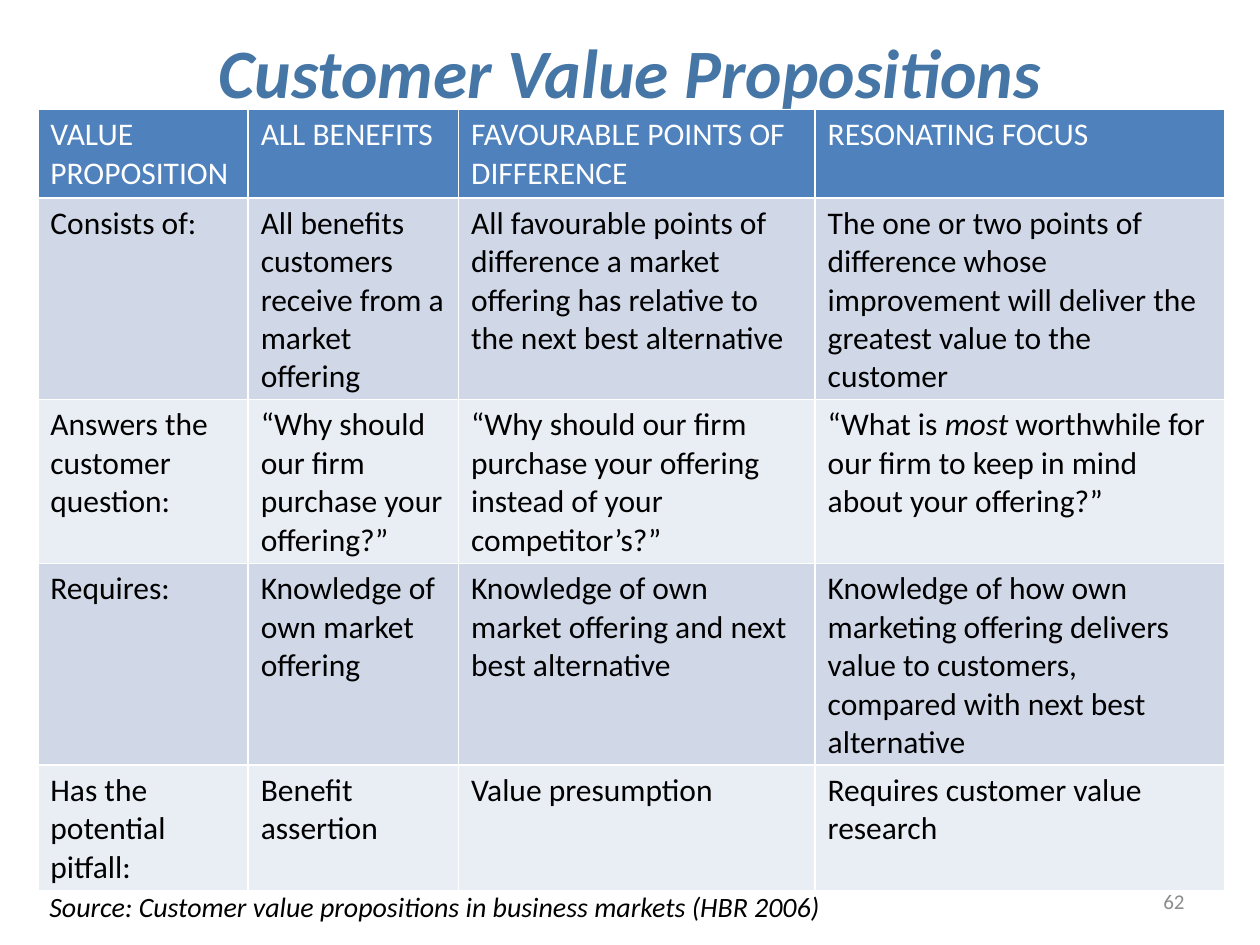
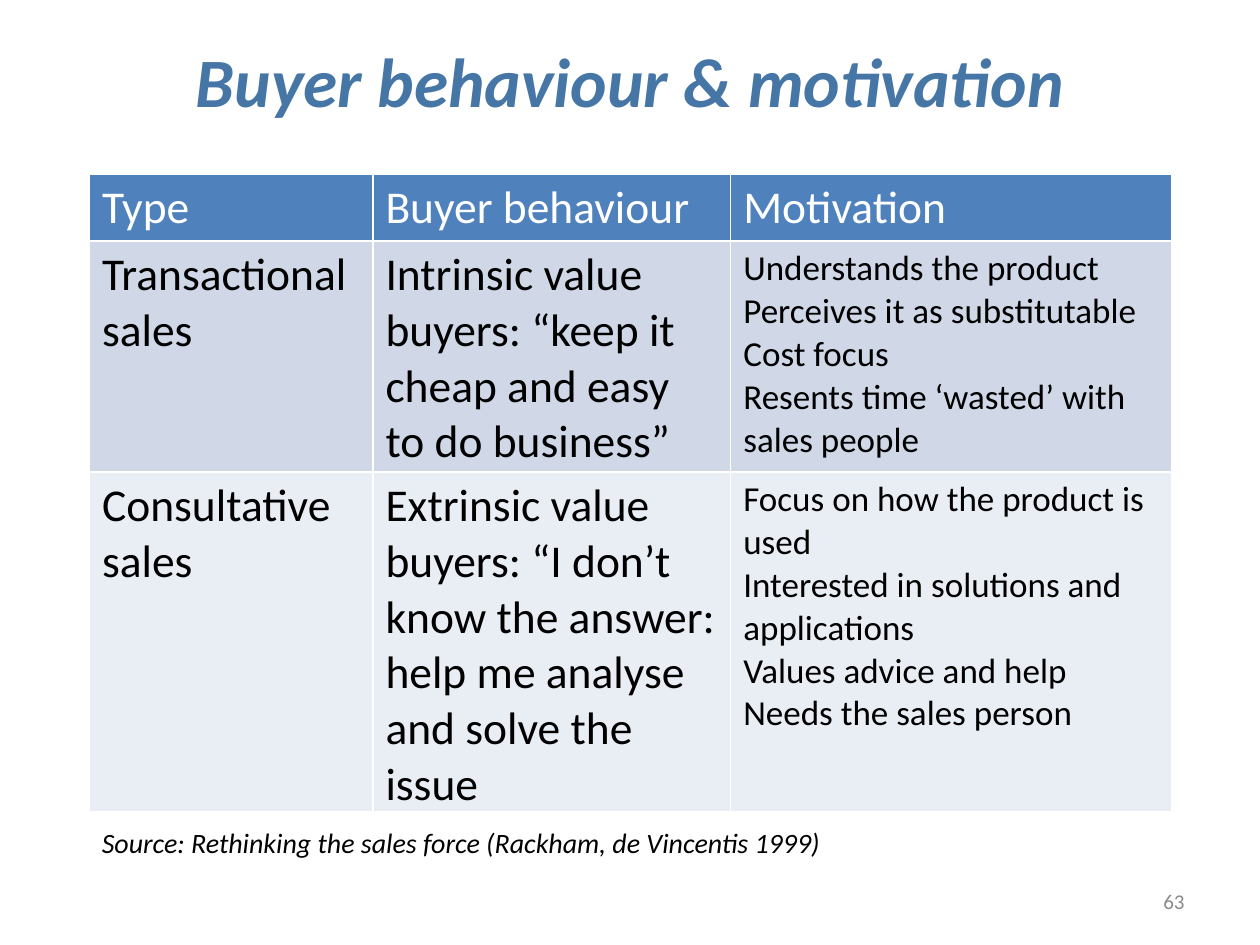
from dataclasses import dataclass

from pptx import Presentation
from pptx.dml.color import RGBColor
from pptx.enum.text import MSO_ANCHOR, PP_ALIGN
from pptx.util import Inches, Pt

# Asterisks mark italic words; a list in a cell holds one paragraph per item.
SLIDES = [
    {
        "title": "Customer Value Propositions",
        "top": 0.17,
        "number": "62",
        "source": "Source: Customer value propositions in business markets (HBR 2006)",
        "source_box": (0.22, 7.01, 6.46, 0.37),
        "source_align": PP_ALIGN.CENTER,
        "origin": (0.3, 0.87),
        "cols": (1.67, 1.67, 2.83, 3.25),
        "heights": (0.69, 1.6, 1.3, 1.6, 1),
        "size": 18,
        "rows": [
            ("VALUE PROPOSITION", "ALL BENEFITS",
             "FAVOURABLE POINTS OF DIFFERENCE", "RESONATING FOCUS"),
            ("Consists of:",
             "All benefits customers receive from a market offering",
             "All favourable points of difference a market offering has "
             "relative to the next best alternative",
             "The one or two points of difference whose improvement will "
             "deliver the greatest value to the customer"),
            ("Answers the customer question:",
             "“Why should our firm purchase your offering?”",
             "“Why should our firm purchase your offering instead of your "
             "competitor’s?”",
             "“What is *most* worthwhile for our firm to keep in mind about "
             "your offering?”"),
            ("Requires:",
             "Knowledge of own market offering",
             "Knowledge of own market offering and next best alternative",
             "Knowledge of how own marketing offering delivers value to "
             "customers, compared with next best alternative"),
            ("Has the potential pitfall:", "Benefit assertion",
             "Value presumption", "Requires customer value research"),
        ],
    },
    {
        "title": "Buyer behaviour & motivation",
        "top": 0.24,
        "number": "63",
        "source": "Source: Rethinking the sales force (Rackham, de Vincentis 1999)",
        "source_box": (0.71, 6.5, 6.01, 0.37),
        "source_align": PP_ALIGN.LEFT,
        "origin": (0.71, 1.38),
        "cols": (2.25, 2.84, 3.5),
        "heights": (0.53, 1.83, 2.7),
        "size": 26,
        "rows": [
            ("Type", "Buyer behaviour", "Motivation"),
            ("Transactional sales",
             "Intrinsic value buyers: “keep it cheap and easy to do business”",
             ["Understands the product", "Perceives it as substitutable",
              "Cost focus", "Resents time ‘wasted’ with sales people"]),
            ("Consultative sales",
             "Extrinsic value buyers: “I don’t know the answer: help me "
             "analyse and solve the issue",
             ["Focus on how the product is used",
              "Interested in solutions and applications",
              "Values advice and help", "Needs the sales person"]),
        ],
    },
]


@dataclass(frozen=True)
class Theme:
    font: str = "Calibri"
    title: str = "4676A6"
    head: str = "4F81BD"
    bands: tuple = ("E9EDF4", "D0D8E8")
    light: str = "FFFFFF"
    ink: str = "000000"
    muted: str = "8C8C8C"
    title_size: float = 39.6
    list_size: int = 20
    source_size: int = 16
    number_size: int = 12


THEME = Theme()


def style(par, size, color, bold=False, italic=None):
    font = par.font
    font.name, font.size = THEME.font, Pt(size)
    font.color.rgb = RGBColor.from_string(color)
    font.bold, font.italic = bold, italic


def add_label(slide, box, text, size, color, align,
              anchor=MSO_ANCHOR.MIDDLE, **look):
    frame = slide.shapes.add_textbox(*map(Inches, box)).text_frame
    frame.word_wrap = True
    frame.vertical_anchor = anchor
    par = frame.paragraphs[0]
    par.text, par.alignment = text, align
    style(par, size, color, **look)


def fill_cell(cell, text, size, color, back):
    cell.fill.solid()
    cell.fill.fore_color.rgb = RGBColor.from_string(back)
    if isinstance(text, list):
        size = THEME.list_size
    else:
        text = [text]
    frame = cell.text_frame
    for i, line in enumerate(text):
        par = frame.add_paragraph() if i else frame.paragraphs[0]
        for j, part in enumerate(line.split("*")):
            run = par.add_run()
            run.text = part
            if j % 2:
                run.font.italic = True
        style(par, size, color)


def add_grid(slide, data):
    rows, cols, heights = data["rows"], data["cols"], data["heights"]
    box = (*data["origin"], sum(cols), sum(heights))
    table = slide.shapes.add_table(len(rows), len(cols), *map(Inches, box)).table
    for col, width in zip(table.columns, cols):
        col.width = Inches(width)
    for r, (row, height) in enumerate(zip(rows, heights)):
        table.rows[r].height = Inches(height)
        color, back = (THEME.ink, THEME.bands[r % 2]) if r else (THEME.light, THEME.head)
        for c, text in enumerate(row):
            fill_cell(table.cell(r, c), text, data["size"], color, back)


def add_page(deck, data):
    slide = deck.slides.add_slide(deck.slide_layouts[6])
    add_label(slide, (7.17, 6.95, 2.33, 0.4), data["number"],
              THEME.number_size, THEME.muted, PP_ALIGN.RIGHT)
    add_label(slide, (0.21, data["top"], 9.58, 0.78), data["title"],
              THEME.title_size, THEME.title, PP_ALIGN.CENTER,
              bold=True, italic=True)
    add_label(slide, data["source_box"], data["source"], THEME.source_size,
              THEME.ink, data["source_align"], MSO_ANCHOR.TOP, italic=True)
    add_grid(slide, data)


def main():
    deck = Presentation()
    deck.slide_width, deck.slide_height = Inches(10), Inches(7.5)
    for data in SLIDES:
        add_page(deck, data)
    deck.save("out.pptx")


if __name__ == "__main__":
    main()
